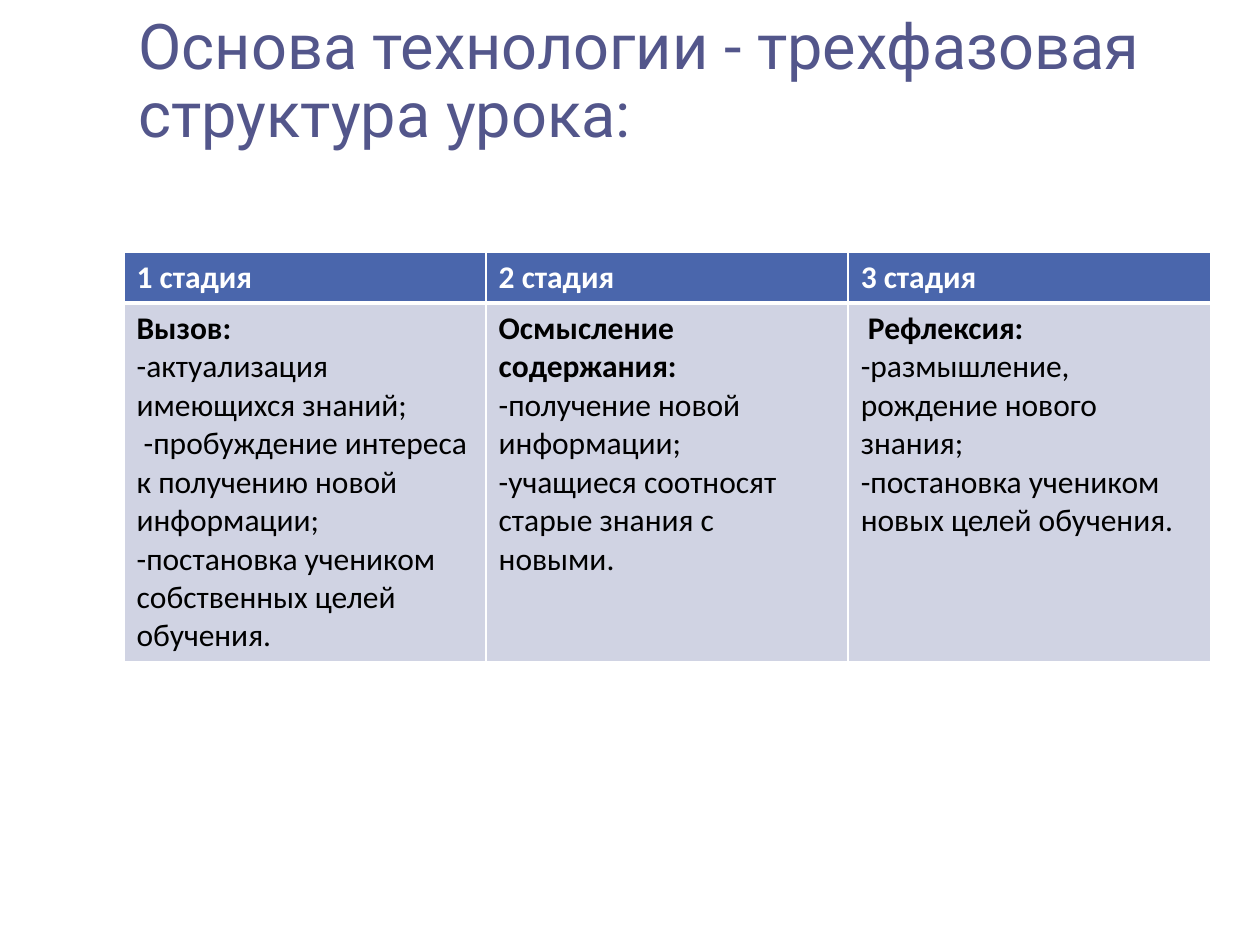
from lxml import etree
from pptx import Presentation
from pptx.dml.color import RGBColor
from pptx.enum.text import MSO_ANCHOR, PP_ALIGN
from pptx.oxml.ns import qn
from pptx.util import Cm, Pt

TITLE_COLOR = RGBColor(0x53, 0x56, 0x8B)
HEADER_FILL = RGBColor(0x4A, 0x66, 0xAC)
BODY_FILL = RGBColor(0xD0, 0xD3, 0xE3)
WHITE = RGBColor(0xFF, 0xFF, 0xFF)
BLACK = RGBColor(0x00, 0x00, 0x00)

STAGES = [
    ("1 стадия", [
        "Вызов:",
        "-актуализация имеющихся знаний;",
        " -пробуждение интереса к получению новой информации;",
        "-постановка учеником собственных целей обучения.",
    ]),
    ("2 стадия", [
        "Осмысление содержания:",
        "-получение новой информации;",
        "-учащиеся соотносят старые знания с новыми.",
    ]),
    ("3 стадия", [
        " Рефлексия:",
        "-размышление, рождение нового знания;",
        "-постановка учеником новых целей обучения.",
    ]),
]


def set_borders(cell, top, bottom):
    """Draw white cell borders: 1 pt at the sides, given widths above and below."""
    tc_pr = cell._tc.get_or_add_tcPr()
    widths = {"a:lnL": 1, "a:lnR": 1, "a:lnT": top, "a:lnB": bottom}
    for i, (tag, width) in enumerate(widths.items()):
        ln = etree.Element(qn(tag), w=str(Pt(width)))
        fill = etree.SubElement(ln, qn("a:solidFill"))
        etree.SubElement(fill, qn("a:srgbClr"), val=str(WHITE))
        tc_pr.insert(i, ln)


def fill_cell(cell, lines, fill, color):
    """Write the lines into a cell, the first one in bold."""
    cell.fill.solid()
    cell.fill.fore_color.rgb = fill
    tf = cell.text_frame
    tf.text = "\n".join(lines)
    for i, p in enumerate(tf.paragraphs):
        p.font.name = "Calibri"
        p.font.size = Pt(18)
        p.font.bold = i == 0
        p.font.color.rgb = color


def add_title(slide, text, left, top, width, height):
    """Place and format the title placeholder."""
    sp = slide.shapes.title
    sp.left, sp.top, sp.width, sp.height = left, top, width, height
    tf = sp.text_frame
    tf.text = text
    tf.word_wrap = True
    tf.vertical_anchor = MSO_ANCHOR.MIDDLE
    p = tf.paragraphs[0]
    p.alignment = PP_ALIGN.LEFT
    p.line_spacing = 0.9
    p.font.name = "Roboto"
    p.font.size = Pt(36)
    p.font.color.rgb = TITLE_COLOR


def add_stages(slide, stages, left, top, width, height):
    """Add the table with one column for each stage of the lesson."""
    table = slide.shapes.add_table(2, len(stages), left, top, width, height).table
    header_height = Cm(1.03)
    table.rows[0].height = header_height
    table.rows[1].height = height - header_height
    for col, (name, lines) in enumerate(stages):
        table.columns[col].width = width // len(stages)
        header, body = table.cell(0, col), table.cell(1, col)
        fill_cell(header, [name], HEADER_FILL, WHITE)
        set_borders(header, 1, 3)
        fill_cell(body, lines, BODY_FILL, BLACK)
        set_borders(body, 3, 1)


def main():
    """Build and save the slide."""
    prs = Presentation()
    prs.slide_width, prs.slide_height = Cm(25.4), Cm(19.05)
    slide = prs.slides.add_slide(prs.slide_layouts[5])
    add_title(slide, "Основа технологии - трехфазовая структура урока:",
              Cm(2.54), Cm(0.5), Cm(22.35), Cm(2.36))
    add_stages(slide, STAGES, Cm(2.5), Cm(5.08), Cm(21.9), Cm(8.25))
    prs.save("out.pptx")


if __name__ == "__main__":
    main()
